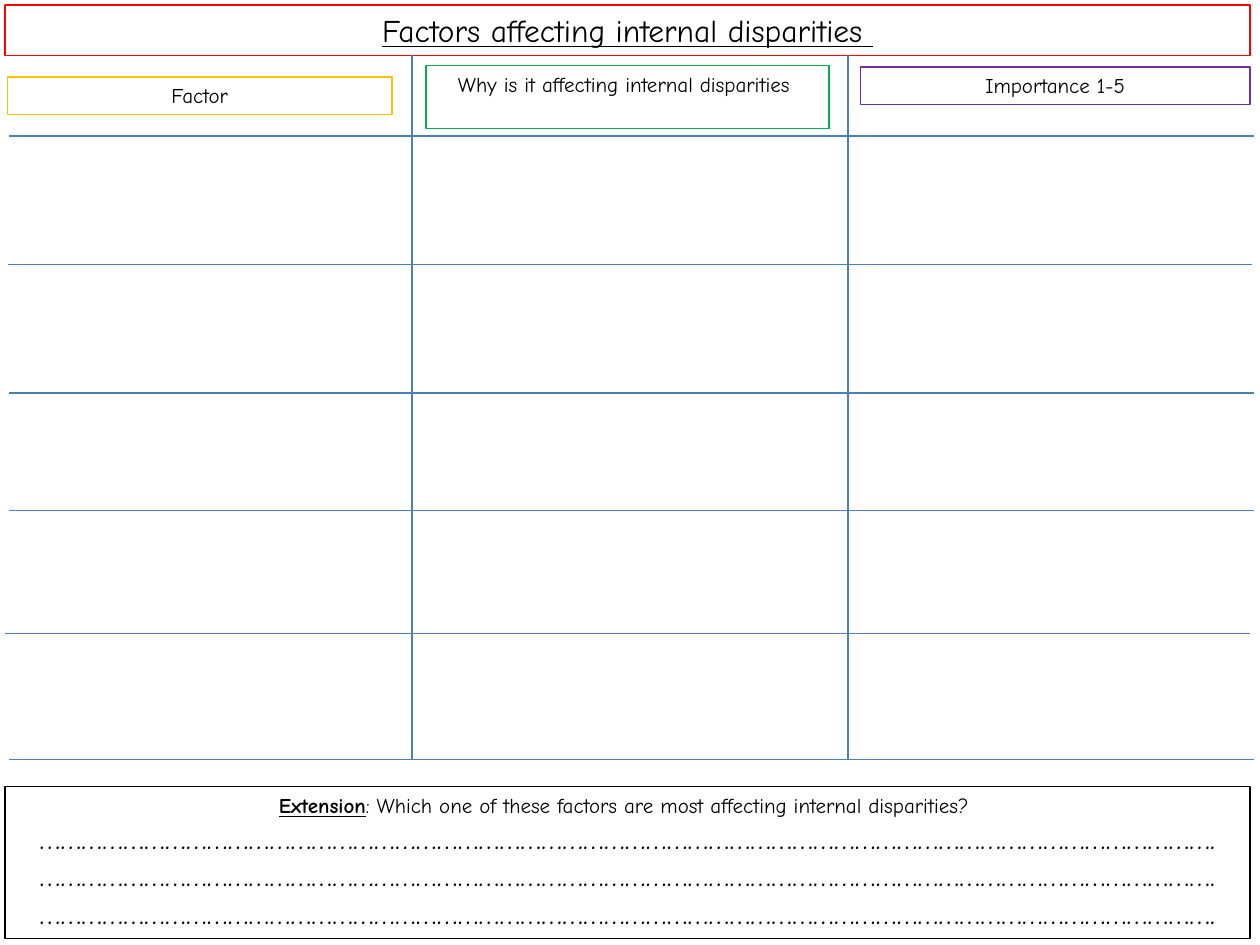
from lxml import etree
from pptx import Presentation
from pptx import util as u
from pptx.dml.color import RGBColor
from pptx.enum import shapes, text
from pptx.oxml.ns import qn


def colour(value):
    return RGBColor.from_string(value)


class Worksheet:
    font_name = "Comic Neue"
    ink = "000000"
    paper = "FFFFFF"
    rule = "4B7EBC"

    def __init__(self, slide):
        self.slide = slide

    def box(self, left, top, width, height, outline, weight=0.75):
        shape = self.slide.shapes.add_shape(
            shapes.MSO_SHAPE.RECTANGLE,
            u.Inches(left), u.Inches(top), u.Inches(width), u.Inches(height))
        shape.shadow.inherit = False
        shape.fill.solid()
        shape.fill.fore_color.rgb = colour(self.paper)
        shape.line.color.rgb = colour(outline)
        shape.line.width = u.Pt(weight)
        frame = shape.text_frame
        frame.word_wrap = True
        frame.vertical_anchor = text.MSO_ANCHOR.TOP
        frame.auto_size = text.MSO_AUTO_SIZE.SHAPE_TO_FIT_TEXT
        return frame

    def add_words(self, paragraph, words, size):
        paragraph.alignment = text.PP_ALIGN.CENTER
        paragraph.font.name = self.font_name
        paragraph.font.size = u.Pt(size)
        paragraph.font.color.rgb = colour(self.ink)
        run = paragraph.add_run()
        run.text = words
        return run

    def line(self, x1, y1, x2, y2):
        connector = self.slide.shapes.add_connector(
            shapes.MSO_CONNECTOR.STRAIGHT,
            u.Inches(x1), u.Inches(y1), u.Inches(x2), u.Inches(y2))
        connector.line.color.rgb = colour(self.rule)
        connector.line.width = u.Pt(0.75)
        etree.SubElement(connector._element.spPr, qn("a:effectLst"))


def main():
    presentation = Presentation()
    presentation.slide_width = u.Inches(10)
    presentation.slide_height = u.Inches(7.5)
    slide = presentation.slides.add_slide(presentation.slide_layouts[6])
    sheet = Worksheet(slide)

    title = sheet.box(0.04, 0.04, 9.88, 0.4, "FF0000")
    sheet.add_words(title.paragraphs[0], "Factors affecting internal disparities ", 18)
    title.paragraphs[0].font.underline = True

    extension = sheet.box(0.04, 6.24, 9.88, 1.21, "000000")
    question = extension.paragraphs[0]
    label = sheet.add_words(question, "Extension", 12)
    label.font.bold = True
    label.font.underline = True
    sheet.add_words(question, ": Which one of these factors are most affecting internal disparities? ", 12)
    answer_line = "……………………………………………………………………………………………………………………………………………………."
    for _ in range(3):
        sheet.add_words(extension.add_paragraph(), answer_line, 18)

    for x in (3.27, 6.73):
        sheet.line(x, 0.44, x, 6.03)
    for y, left in ((1.08, 0.07), (2.1, 0.06), (3.12, 0.07),
                    (4.05, 0.07), (5.03, 0.04), (6.03, 0.07)):
        sheet.line(left + 9.88, y, left, y)

    headings = (
        ("Importance 1-5", 6.83, 0.53, 3.09, 0.3, "7030A0"),
        ("Why is it affecting internal disparities ", 3.38, 0.52, 3.2, 0.5, "00B050"),
        ("Factor", 0.06, 0.61, 3.05, 0.3, "FFC000"),
    )
    for words, left, top, width, height, outline in headings:
        heading = sheet.box(left, top, width, height, outline, 1)
        sheet.add_words(heading.paragraphs[0], words, 12)

    presentation.save("out.pptx")


if __name__ == "__main__":
    main()
